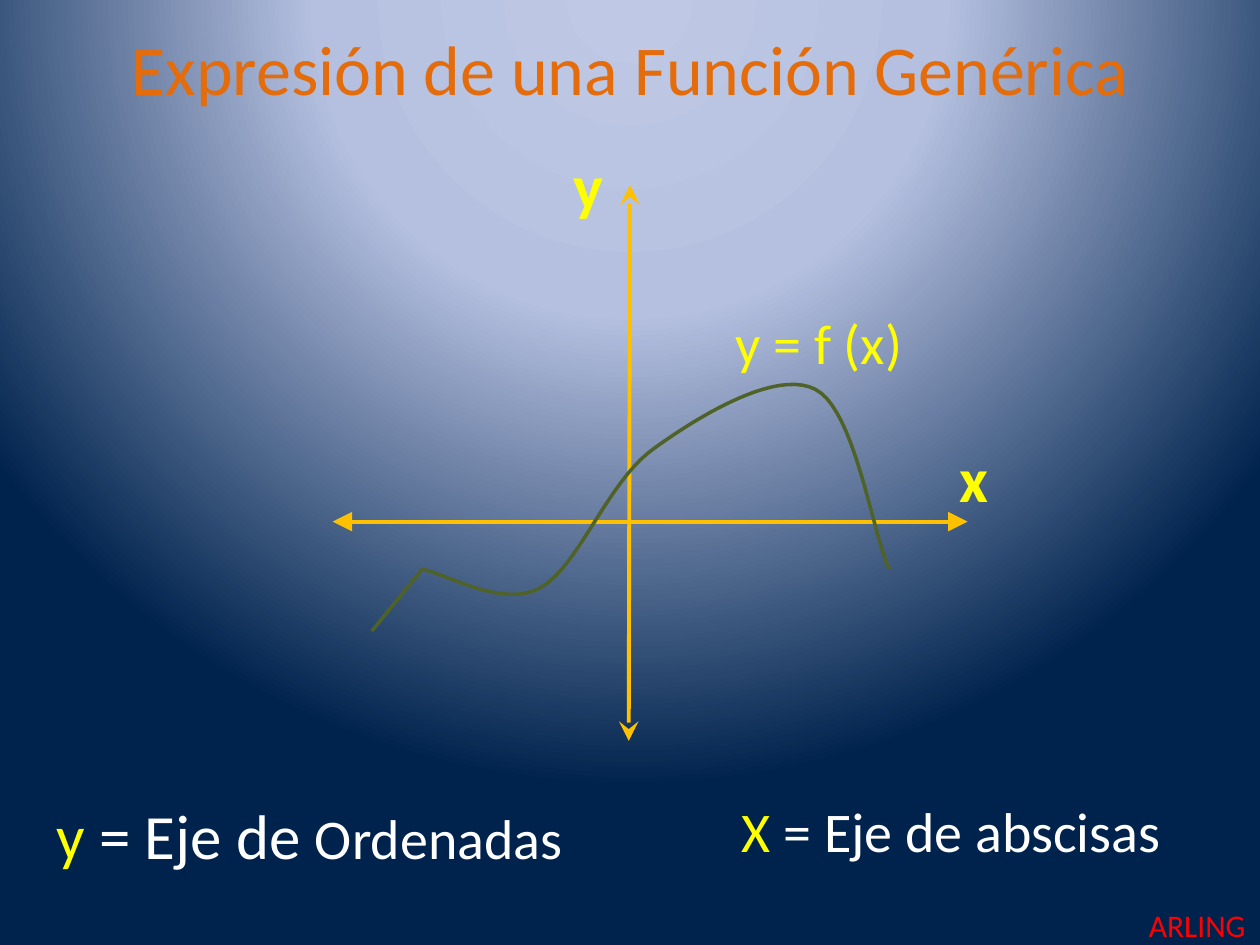
from pptx import Presentation
from pptx.dml.color import RGBColor
from pptx.enum.shapes import MSO_CONNECTOR
from pptx.enum.text import MSO_ANCHOR, MSO_AUTO_SIZE, PP_ALIGN
from pptx.oxml import parse_xml
from pptx.oxml.ns import nsdecls, qn
from pptx.oxml.xmlchemy import OxmlElement
from pptx.util import Inches, Pt

YELLOW, WHITE, GOLD = "FFFF00", "FFFFFF", "FFC000"
ORANGE, RED, GREEN = "E46C0A", "FF0000", "4F6228"

BACKGROUND_STOPS = [(0, "BFC9E5"), (40, "B5C0E0"), (100, "00234D")]

# Position, wrapping and runs (text, colour, format) of each label
LABELS = [
    ((5.74, 2.4, 1.54, 0.64), False, [("y = f (x)", YELLOW, {"size": 32})]),
    ((5.79, 6.27, 3.56, 0.64), False,
     [("X ", YELLOW, {"size": 32}), ("= Eje de abscisas", WHITE, {"size": 32})]),
    ((0.35, 6.27, 4.26, 0.71), False,
     [("y ", YELLOW, {"size": 36}), ("= Eje de ", WHITE, {"size": 36}),
      ("Ordenadas", WHITE, {"size": 32})]),
    ((4.45, 1.11, 0.71, 0.71), True, [("y", YELLOW, {"size": 36, "bold": True})]),
    ((7.52, 3.44, 0.71, 0.71), True, [("x", YELLOW, {"size": 36, "bold": True})]),
    ((9.02, 7.14, 2.36, 0.4), True, [("ARLING", RED, {"size": 18})]),
]

AXES = [((5, 1.47), (4.99, 5.88), "stealth"),
        ((2.64, 4.14), (7.68, 4.14), "triangle")]

CURVE_START = (2.95, 5.01)
CURVE_BEND = (3.35, 4.52)
# Two control points and the end point of each Bézier segment
CURVE_SEGMENTS = [
    ((3.51, 4.54), (3.98, 4.83), (4.28, 4.67)),
    ((4.59, 4.51), (4.82, 3.82), (5.19, 3.56)),
    ((5.55, 3.3), (6.16, 2.93), (6.47, 3.09)),
    ((6.79, 3.25), (6.93, 4.27), (7.06, 4.52)),
]


def rgb(color):
    return RGBColor.from_string(color)


def set_background(slide):
    """Radial gradient that spreads from above the top edge."""
    slide.background.fill.gradient()
    grad = slide._element.find(".//" + qn("a:gradFill"))
    stops = "".join(
        f'<a:gs pos="{pos * 1000}"><a:srgbClr val="{color}"/></a:gs>'
        for pos, color in BACKGROUND_STOPS)
    grad.getparent().replace(grad, parse_xml(
        f'<a:gradFill rotWithShape="1" {nsdecls("a")}><a:gsLst>{stops}</a:gsLst>'
        '<a:path path="circle"><a:fillToRect l="50000" t="-80000" r="50000" b="180000"/>'
        '</a:path></a:gradFill>'))


def add_run(p, text, color, size, **font_format):
    r = p.add_run()
    r.text = text
    r.font.color.rgb = rgb(color)
    for name, value in {"name": "Calibri", "size": Pt(size), **font_format}.items():
        setattr(r.font, name, value)


def set_title(slide, text):
    title = slide.shapes.title
    box = {"left": 0.75, "top": -0.27, "width": 8.5, "height": 1.61}
    for name, value in box.items():
        setattr(title, name, Inches(value))
    title.text_frame.vertical_anchor = MSO_ANCHOR.MIDDLE
    p = title.text_frame.paragraphs[0]
    p.alignment = PP_ALIGN.CENTER
    add_run(p, text, ORANGE, 40)


def add_label(slide, box, wrap, runs):
    tf = slide.shapes.add_textbox(*map(Inches, box)).text_frame
    tf.word_wrap = wrap
    tf.auto_size = MSO_AUTO_SIZE.SHAPE_TO_FIT_TEXT
    for text, color, font_format in runs:
        add_run(tf.paragraphs[0], text, color, **font_format)


def add_axis(slide, start, end, arrow):
    axis = slide.shapes.add_connector(
        MSO_CONNECTOR.STRAIGHT, *map(Inches, start + end))
    axis.line.color.rgb = rgb(GOLD)
    axis.line.width = Pt(2.25)
    ln = axis.line._get_or_add_ln()
    for tag in ("a:headEnd", "a:tailEnd"):
        tip = OxmlElement(tag)
        for name, value in {"type": arrow, "w": "lg", "len": "lg"}.items():
            tip.set(name, value)
        ln.append(tip)
    axis._element.spPr.append(OxmlElement("a:effectLst"))


def bezier_points(p0, p1, p2, p3, steps=20):
    """Points along a cubic Bézier segment, without its start."""
    for i in range(1, steps + 1):
        t = i / steps
        u = 1 - t
        yield tuple(u**3 * a + 3 * u * u * t * b + 3 * u * t * t * c + t**3 * d
                    for a, b, c, d in zip(p0, p1, p2, p3))


def add_curve(slide):
    points = [CURVE_START, CURVE_BEND]
    for segment in CURVE_SEGMENTS:
        points.extend(bezier_points(points[-1], *segment))
    # The builder rounds to whole units, so the points are given in EMU
    start, *rest = [(Inches(x), Inches(y)) for x, y in points]
    builder = slide.shapes.build_freeform(*start)
    builder.add_line_segments(rest, close=False)
    curve = builder.convert_to_shape()
    curve.shadow.inherit = False
    curve.fill.background()
    curve.line.color.rgb = rgb(GREEN)
    curve.line.width = Pt(2)


def main():
    prs = Presentation()
    prs.slide_width, prs.slide_height = Inches(10), Inches(7.5)
    slide = prs.slides.add_slide(prs.slide_layouts[0])
    subtitle = slide.placeholders[1]._element
    subtitle.getparent().remove(subtitle)

    set_background(slide)
    set_title(slide, "Expresión de una Función Genérica")
    for axis in AXES:
        add_axis(slide, *axis)
    add_curve(slide)
    for label in LABELS:
        add_label(slide, *label)
    prs.save("out.pptx")


if __name__ == "__main__":
    main()
